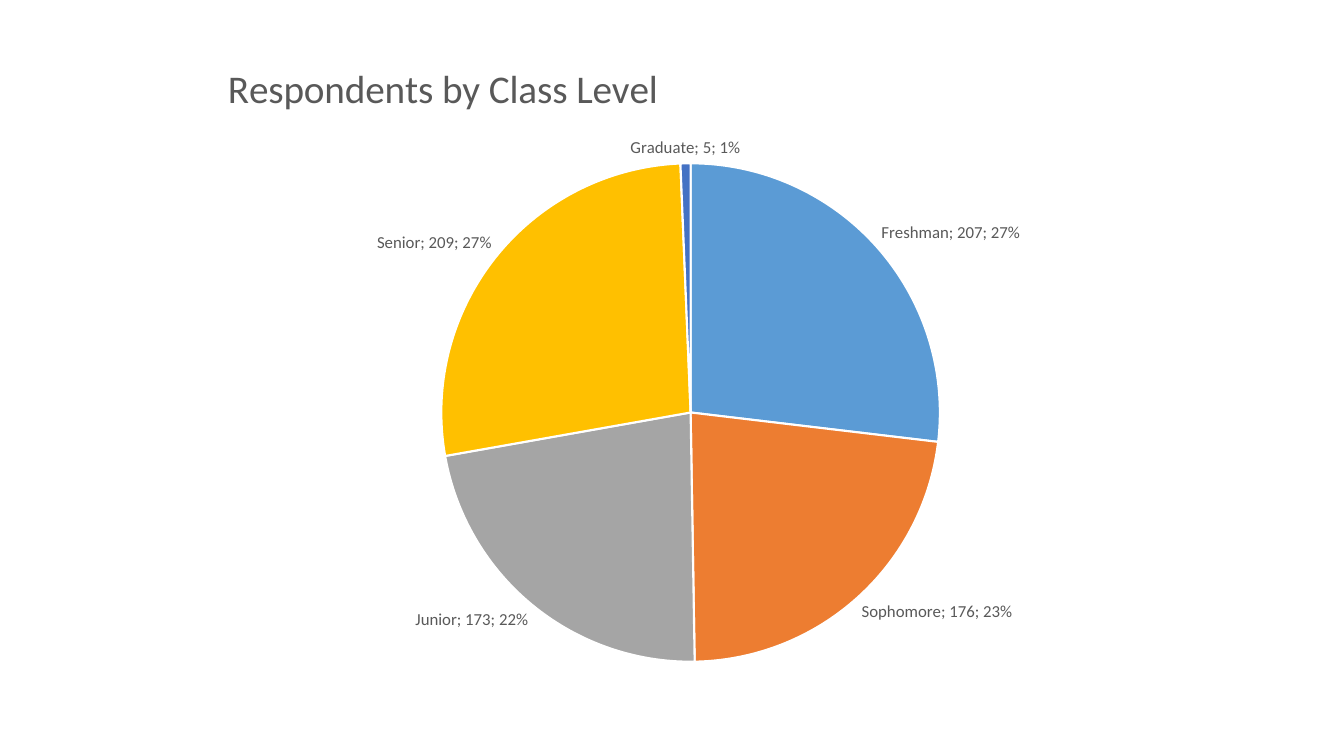
from lxml import etree
from pptx import Presentation
from pptx.chart.data import CategoryChartData
from pptx.dml.color import RGBColor
from pptx.enum.chart import XL_CHART_TYPE as ChartType, XL_LABEL_POSITION as LabelPosition
from pptx.oxml.ns import qn
from pptx.util import Inches, Pt

COLORS = {
    "Freshman": "5B9BD5",
    "Sophomore": "ED7D31",
    "Junior": "A5A5A5",
    "Senior": "FFC000",
    "Graduate": "4472C4",
    "text": "595959",
    "border": "FFFFFF",
}
RESPONDENTS = {"Freshman": 207, "Sophomore": 176, "Junior": 173, "Senior": 209, "Graduate": 5}


def write_title(chart, text, size, color, font="Calibri"):
    chart.has_title = True
    paragraph = chart.chart_title.text_frame.paragraphs[0]
    run = paragraph.add_run()
    run.text = text
    run.font.name = font
    run.font.size = Pt(size)
    run.font.bold = False
    run.font.color.rgb = RGBColor.from_string(color)


def set_layout(parent, **settings):
    """Place a chart part by hand; x, y, w and h are shares of the chart."""
    layout = parent.find(qn("c:layout"))
    if layout is None:
        layout = etree.Element(qn("c:layout"))
        text = parent.find(qn("c:tx"))
        parent.insert(0 if text is None else 1, layout)
    manual = etree.SubElement(layout, qn("c:manualLayout"))
    for name, value in settings.items():
        etree.SubElement(manual, qn(f"c:{name}"), val=str(value))


presentation = Presentation()
presentation.slide_width = Inches(13.33)
presentation.slide_height = Inches(7.5)
slide = presentation.slides.add_slide(presentation.slide_layouts[6])

chart_data = CategoryChartData()
chart_data.categories = list(RESPONDENTS)
chart_data.add_series("Series 1", list(RESPONDENTS.values()))
chart = slide.shapes.add_chart(
    ChartType.PIE, Inches(2.19), Inches(0.48), Inches(9.51), Inches(6.23), chart_data
).chart
chart.has_legend = False
chart.font.name = "Calibri"
chart.font.size = Pt(10)

write_title(chart, "Respondents by Class Level", size=28, color=COLORS["text"])
chart.chart_title.include_in_layout = False
title = chart.chart_title.format.fill and chart.element.find(".//" + qn("c:title"))
set_layout(title, xMode="edge", yMode="edge", x=0, y=0.01)
plot_area = chart.element.find(".//" + qn("c:plotArea"))
set_layout(
    plot_area, layoutTarget="inner", xMode="edge", yMode="edge", x=0.23, y=0.18, w=0.52, h=0.8
)

plot = chart.plots[0]
plot.vary_by_categories = True
series = plot.series[0]
for index, level in enumerate(RESPONDENTS):
    slice_format = series.points[index].format
    slice_format.fill.solid()
    slice_format.fill.fore_color.rgb = RGBColor.from_string(COLORS[level])
    slice_format.line.color.rgb = RGBColor.from_string(COLORS["border"])
    slice_format.line.width = Pt(1.5)

labels = series.data_labels
labels.show_category_name = True
labels.show_value = True
labels.show_percentage = True
labels.position = LabelPosition.OUTSIDE_END
labels.font.name = "Calibri"
labels.font.size = Pt(12)
labels.font.color.rgb = RGBColor.from_string(COLORS["text"])
separator = etree.Element(qn("c:separator"))
separator.text = "; "
series.element if hasattr(series, "element") else None
chart.element.find(".//" + qn("c:showBubbleSize")).addnext(separator)

presentation.save("out.pptx")
